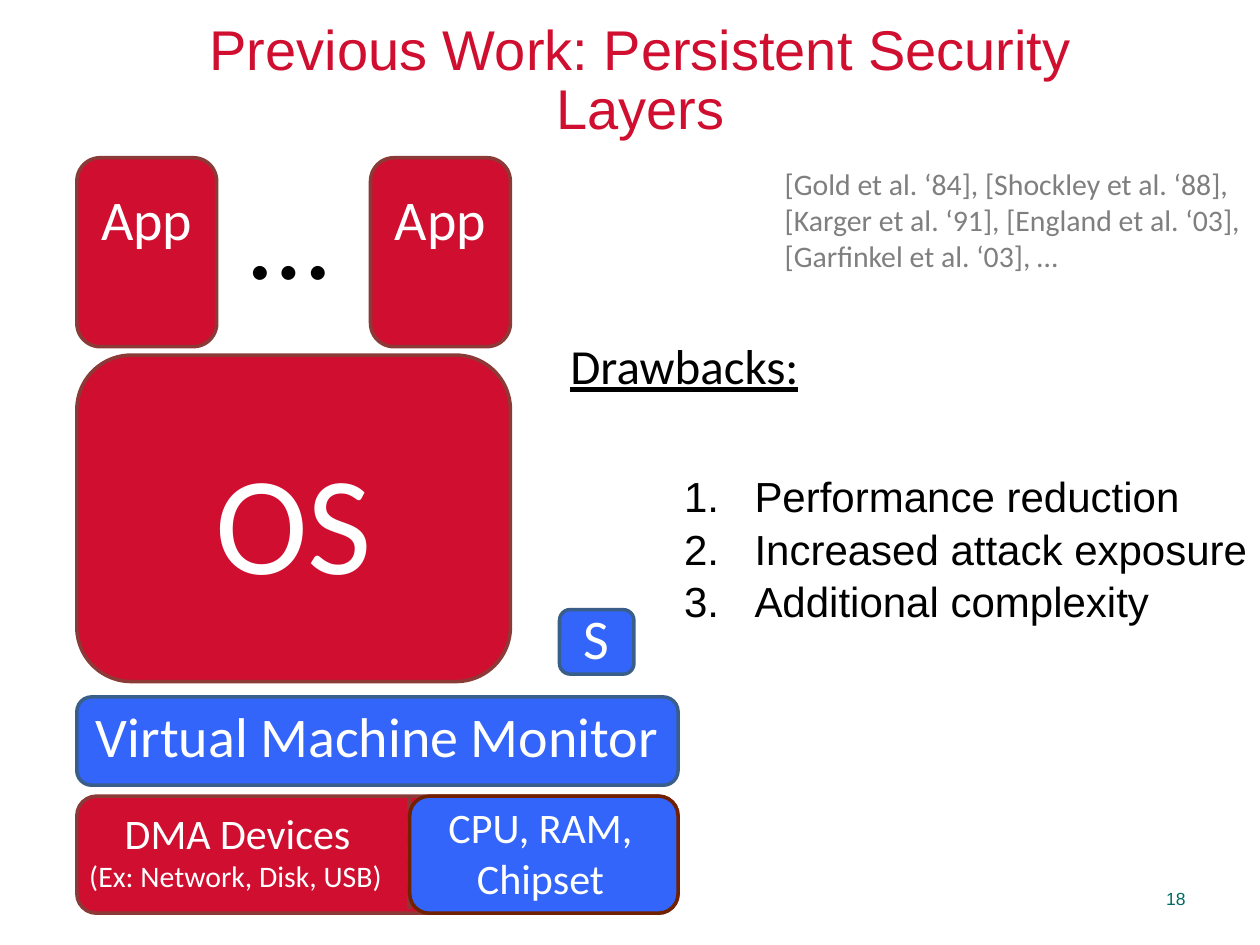
"""Build the slide on persistent security layers and their drawbacks."""
from lxml import etree
from pptx import Presentation
from pptx import util as u
from pptx.dml.color import RGBColor
from pptx.enum import dml, shapes, text
from pptx.oxml import ns

RED, RED_EDGE = "CF0E30", "8C3A38"
BLUE, BLUE_EDGE = "3365FB", "395E8A"
WHITE, BLACK = "FFFFFF", "000000"
LEFT, STACK_WIDTH = 1.55, 12.12
HARDWARE_TOP, HARDWARE_HEIGHT = 16.05, 2.36
INSETS = (0.25, 0.13, 0.25, 0.13)
NO_INSETS = (0, 0, 0, 0)
CENTER, START, END = text.PP_ALIGN.CENTER, text.PP_ALIGN.LEFT, text.PP_ALIGN.RIGHT
TOP, MIDDLE, BOTTOM = (text.MSO_ANCHOR.TOP, text.MSO_ANCHOR.MIDDLE,
                       text.MSO_ANCHOR.BOTTOM)


def color(value):
    return RGBColor.from_string(value)


class SlideBuilder:
    def __init__(self, slide, label_font="Calibri", body_font="Arial"):
        self.slide = slide
        self.label_font = label_font
        self.body_font = body_font

    def fill_text(self, shape, words, size, ink, font=None, align=START, anchor=TOP,
                  insets=INSETS, wrap=True):
        frame = shape.text_frame
        frame.text = words
        frame.word_wrap = wrap
        frame.auto_size = text.MSO_AUTO_SIZE.NONE
        frame.vertical_anchor = anchor
        (frame.margin_left, frame.margin_top,
         frame.margin_right, frame.margin_bottom) = map(u.Cm, insets)
        for paragraph in frame.paragraphs:
            paragraph.alignment = align
            for run in paragraph.runs:
                run.font.name = font or self.label_font
                run.font.size = u.Pt(size)
                run.font.color.rgb = color(ink)
        return frame.paragraphs

    def label(self, box, words, size, ink, **style):
        shape = self.slide.shapes.add_textbox(*map(u.Cm, box))
        return self.fill_text(shape, words, size, ink, **style)

    def block(self, box, fill, edge, words="", size=32, **style):
        shape = self.slide.shapes.add_shape(
            shapes.MSO_SHAPE.ROUNDED_RECTANGLE, *map(u.Cm, box))
        shape.shadow.inherit = False
        shape.fill.solid()
        shape.fill.fore_color.rgb = color(fill)
        shape.line.color.rgb = color(edge)
        shape.line.width = u.Pt(2)
        if words:
            self.fill_text(shape, words, size, WHITE, align=CENTER, **style)

    def divider(self, x, top, bottom):
        line = self.slide.shapes.add_connector(
            shapes.MSO_CONNECTOR.STRAIGHT, *map(u.Cm, (x, top, x, bottom)))
        line.line.color.rgb = color("8A3837")
        line.line.width = u.Pt(2)
        line.line.dash_style = dml.MSO_LINE.DASH
        etree.SubElement(line._element.spPr, ns.qn("a:effectLst"))

    def place(self, holder, box):
        holder.left, holder.top, holder.width, holder.height = map(u.Cm, box)
        return holder

    def title(self, box, words):
        holder = self.place(self.slide.shapes.title, box)
        heading = self.fill_text(holder, words, 32, RED, font=self.body_font,
                                 align=CENTER, anchor=MIDDLE)
        heading[0].line_spacing = 0.88

    def numbered_list(self, box, items):
        holder = self.place(self.slide.placeholders[1], box)
        entries = self.fill_text(holder, "\n".join(items), 24, BLACK,
                                 font=self.body_font, anchor=MIDDLE)
        for index, entry in enumerate(entries):
            properties = entry._p.get_or_add_pPr()
            properties.set("marL", str(u.Cm(1.42)))
            properties.set("indent", str(-u.Cm(1.42)))
            etree.SubElement(properties, ns.qn("a:buFont"), typeface="+mj-lt")
            etree.SubElement(properties, ns.qn("a:buAutoNum"), type="arabicPeriod")
            entry.line_spacing = 0.88
            entry.space_before = u.Pt(4.6 if index else 0)


def main():
    deck = Presentation()
    deck.slide_width, deck.slide_height = u.Cm(25.4), u.Cm(19.05)
    builder = SlideBuilder(deck.slides.add_slide(deck.slide_layouts[1]))

    builder.title((2.97, 0.64, 19.89, 2.03),
                  "Previous Work: Persistent Security Layers")
    builder.label((19.25, 17.78, 4.9, 0.64), "18", 10, "006B61",
                  font=builder.body_font, align=END)
    builder.label((14.55, 3.35, 10.54, 2.16),
                  "[Gold et al. ‘84], [Shockley et al. ‘88], [Karger et al. ‘91], "
                  "[England et al. ‘03], [Garfinkel et al. ‘03], …",
                  17, "7F7F7F", insets=(1.27, 0, 0, 0))

    builder.block((LEFT, HARDWARE_TOP, STACK_WIDTH, HARDWARE_HEIGHT), RED, RED_EDGE)
    devices, examples = builder.label(
        (LEFT, 16.15, 6.48, 2.01), "DMA Devices\n(Ex: Network, Disk, USB)",
        24, WHITE, align=CENTER)
    examples.alignment = START
    examples.runs[0].font.size = u.Pt(17)
    builder.divider(8.25, HARDWARE_TOP, HARDWARE_TOP + HARDWARE_HEIGHT)
    builder.block((8.26, HARDWARE_TOP, 5.41, HARDWARE_HEIGHT), BLUE, "712000")
    builder.label((8.1, 16.03, 5.59, 2.31), "CPU, RAM,\nChipset", 24, WHITE,
                  align=CENTER)

    builder.block((LEFT, 7.16, 8.74, 6.58), RED, RED_EDGE, "OS", 80, anchor=MIDDLE)
    for app_left in (LEFT, 7.47):
        builder.block((app_left, 3.18, 2.82, 3.81), RED, RED_EDGE, "App",
                      anchor=MIDDLE, insets=(0.25, 0.13, 0.25, 1.5))
    builder.label((4.78, 3.18, 2.29, 3.07), "…", 66, BLACK)
    builder.block((11.28, 12.29, 1.5, 1.3), BLUE, BLUE_EDGE, "S",
                  anchor=BOTTOM, insets=NO_INSETS, wrap=False)
    builder.block((LEFT, 14.05, STACK_WIDTH, 1.78), BLUE, BLUE_EDGE,
                  "Virtual Machine Monitor", anchor=TOP, insets=NO_INSETS, wrap=False)

    builder.numbered_list((13.54, 8.71, 11.89, 4.83),
                          ["Performance reduction", "Increased attack exposure",
                           "Additional complexity"])
    drawbacks = builder.label((11.25, 6.63, 9.78, 1.45), "Drawbacks:", 28, BLACK)
    drawbacks[0].runs[0].font.underline = True

    deck.save("out.pptx")


if __name__ == "__main__":
    main()
